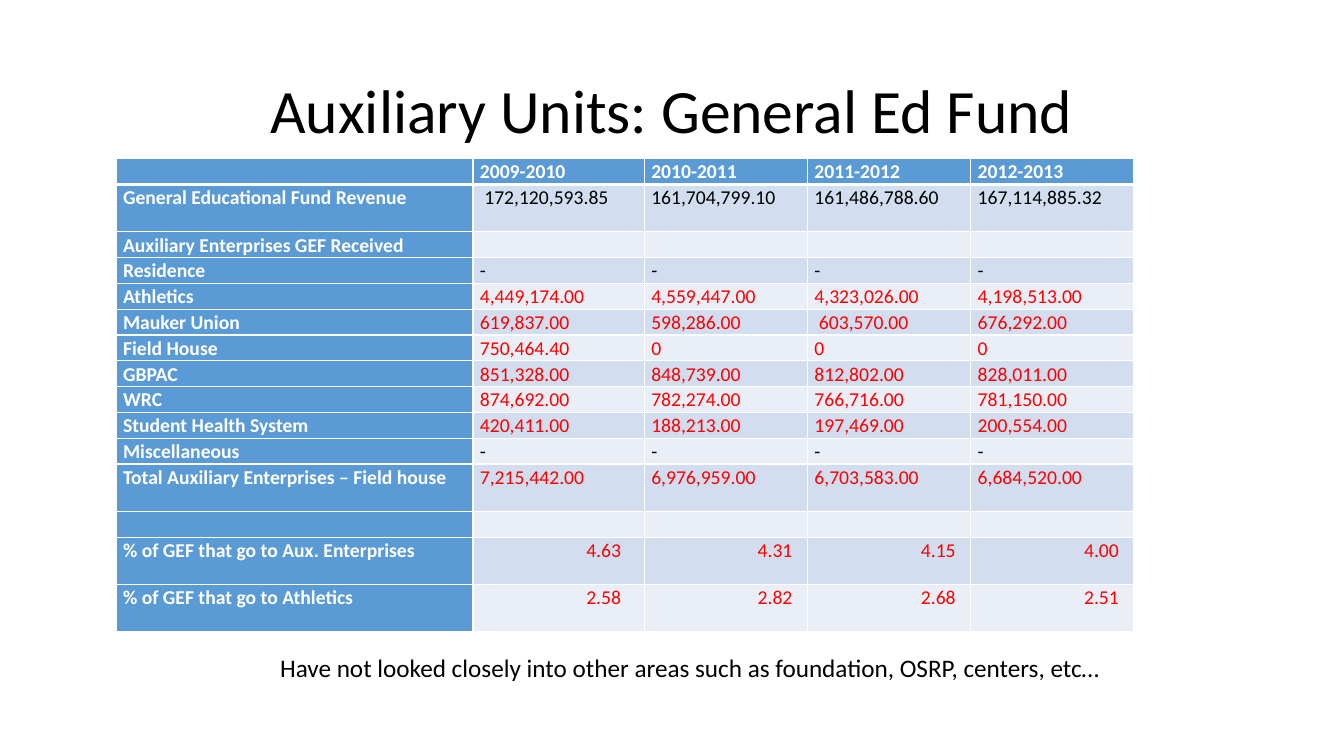
from lxml.etree import SubElement
from pptx import Presentation
from pptx.dml.color import RGBColor
from pptx.enum.text import MSO_ANCHOR, PP_ALIGN
from pptx.oxml.ns import qn
from pptx.util import Pt

FONT = "Calibri"
WHITE, BLACK, RED = "FFFFFF", "000000", "FF0000"
HEADER, BANDS = "5B9BD5", ("D2DEEF", "EAEFF7")
COLUMN_WIDTHS = (254.9, 122.4, 116.6, 116.6, 116.6)
LOW_ROW, TALL_ROW = 18.43, 33.9
TALL_ROWS = (1, 11, 13, 14)
PERCENT_INDENT = 81

ROWS = [
    ("", "2009-2010", "2010-2011", "2011-2012", "2012-2013"),
    ("General Educational Fund Revenue",
     " 172,120,593.85", "161,704,799.10", "161,486,788.60", "167,114,885.32"),
    ("Auxiliary Enterprises GEF Received", "", "", "", ""),
    ("Residence", "-", "-", "-", "-"),
    ("Athletics", "4,449,174.00", "4,559,447.00", "4,323,026.00", "4,198,513.00"),
    ("Mauker Union", "619,837.00", "598,286.00", " 603,570.00", "676,292.00"),
    ("Field House", "750,464.40", "0", "0", "0"),
    ("GBPAC", "851,328.00", "848,739.00", "812,802.00", "828,011.00"),
    ("WRC", "874,692.00", "782,274.00", "766,716.00", "781,150.00"),
    ("Student Health System", "420,411.00", "188,213.00", "197,469.00", "200,554.00"),
    ("Miscellaneous", "-", "-", "-", "-"),
    ("Total Auxiliary Enterprises – Field house",
     "7,215,442.00", "6,976,959.00", "6,703,583.00", "6,684,520.00"),
    ("", "", "", "", ""),
    ("% of GEF that go to Aux. Enterprises", "4.63", "4.31", "4.15", "4.00"),
    ("% of GEF that go to Athletics", "2.58", "2.82", "2.68", "2.51"),
]


def color(value):
    return RGBColor.from_string(value)


def set_font(paragraph, size, value, bold=False):
    font = paragraph.font
    font.name, font.size, font.bold = FONT, Pt(size), bold
    font.color.rgb = color(value)


def set_borders(cell, bottom_width):
    properties = cell._tc.get_or_add_tcPr()
    widths = {"lnL": 1, "lnR": 1, "lnT": 1, "lnB": bottom_width}
    for position, (side, width) in enumerate(widths.items()):
        line = SubElement(properties, qn(f"a:{side}"), w=str(Pt(width)))
        fill = SubElement(line, qn("a:solidFill"))
        SubElement(fill, qn("a:srgbClr"), val=WHITE)
        properties.insert(position, line)


def add_title(page, left, top, width, height):
    title = page.shapes.title
    title.left, title.top = Pt(left), Pt(top)
    title.width, title.height = Pt(width), Pt(height)
    frame = title.text_frame
    frame.text = "Auxiliary Units: General Ed Fund"
    frame.vertical_anchor = MSO_ANCHOR.MIDDLE
    paragraph = frame.paragraphs[0]
    paragraph.alignment = PP_ALIGN.CENTER
    paragraph.line_spacing = 0.9
    set_font(paragraph, 44, BLACK)


def fill_cell(cell, text, row, column):
    heading = row == 0 or column == 0
    percent = row >= 13 and column > 0
    cell.margin_left = Pt(PERCENT_INDENT if percent else 5)
    cell.margin_right = Pt(5)
    cell.margin_top = cell.margin_bottom = 0
    cell.fill.solid()
    cell.fill.fore_color.rgb = color(HEADER if heading else BANDS[(row - 1) % 2])
    set_borders(cell, 3 if row == 0 else 1)

    paragraph = cell.text_frame.paragraphs[0]
    paragraph.line_spacing = 1.07
    text_color = WHITE if heading else BLACK if row == 1 or text == "-" else RED
    set_font(paragraph, 14, text_color, heading)
    if text:
        paragraph.add_run().text = text
    else:
        # Keeps empty rows as low as the others
        SubElement(paragraph._p, qn("a:endParaRPr"), sz="1400")


def add_fund_table(page, left, top):
    heights = [TALL_ROW if row in TALL_ROWS else LOW_ROW for row in range(len(ROWS))]
    table = page.shapes.add_table(
        len(ROWS), len(COLUMN_WIDTHS), Pt(left), Pt(top),
        Pt(sum(COLUMN_WIDTHS)), Pt(sum(heights))).table
    table.first_row = table.horz_banding = False
    for column, width in zip(table.columns, COLUMN_WIDTHS):
        column.width = Pt(width)
    for row, texts in enumerate(ROWS):
        table.rows[row].height = Pt(heights[row])
        for column, text in enumerate(texts):
            fill_cell(table.cell(row, column), text, row, column)


def add_note(page, left, top, width, height):
    box = page.shapes.add_textbox(Pt(left), Pt(top), Pt(width), Pt(height))
    frame = box.text_frame
    frame.word_wrap = False
    frame.text = ("Have not looked closely into other areas such as "
                  "foundation, OSRP, centers, etc…")
    set_font(frame.paragraphs[0], 18, BLACK)


def main():
    deck = Presentation()
    deck.slide_width, deck.slide_height = Pt(960), Pt(540)
    page = deck.slides.add_slide(deck.slide_layouts[5])
    add_title(page, 66, 28.75, 828, 104.4)
    add_fund_table(page, 82.9, 113.3)
    add_note(page, 193, 462.2, 607, 29)
    deck.save("out.pptx")


if __name__ == "__main__":
    main()
